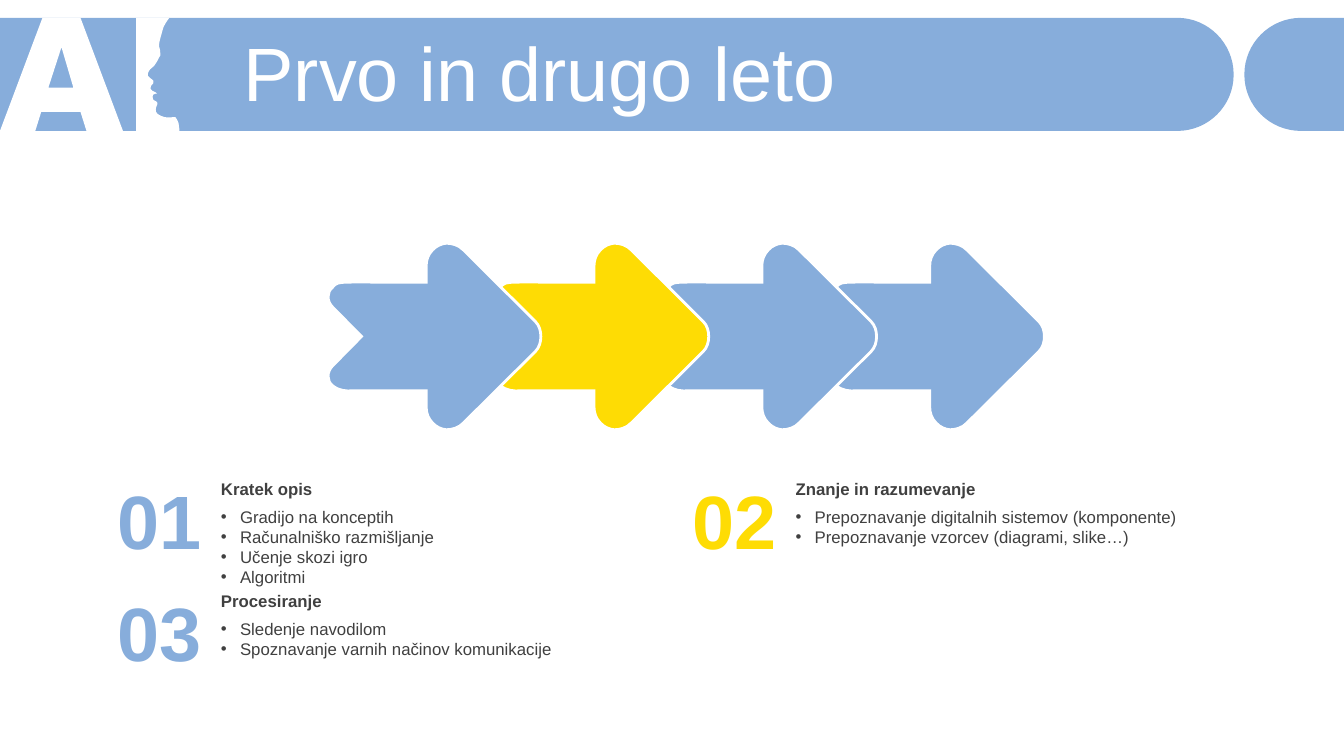
from dataclasses import dataclass
from math import cos, radians, sin

from lxml import etree
from pptx import Presentation
from pptx.dml.color import RGBColor
from pptx.enum.text import MSO_ANCHOR, MSO_AUTO_SIZE, PP_ALIGN
from pptx.oxml.ns import qn
from pptx.util import Cm, Pt

TOP, MIDDLE = MSO_ANCHOR.TOP, MSO_ANCHOR.MIDDLE
LEFT, RIGHT = PP_ALIGN.LEFT, PP_ALIGN.RIGHT
GROW, FIXED = MSO_AUTO_SIZE.SHAPE_TO_FIT_TEXT, MSO_AUTO_SIZE.NONE

Point = tuple[float, float]
Move = tuple[str, list[Point]]


@dataclass(frozen=True)
class Theme:
    font: str = "Arial"
    blue: str = "87ADDB"
    gold: str = "FEDC04"
    white: str = "FFFFFF"
    ink: str = "404040"
    large: int = 54
    small: int = 12
    edge: int = 2


@dataclass(frozen=True)
class Card:
    num: str
    left: float
    top: float
    head: str
    items: list[str]
    color: str


THEME = Theme()

# Outlines in cm: M starts a contour, L is a line, C a curve
BAR = "M 0 .45 L 29.67 .45 C 30.45 .45 31.09 1.09 31.09 1.88 C 31.09 2.67 30.45 3.3 29.67 3.3 L 0 3.3"
CAP = ("M 32.79 .45 L 33.87 .45 L 33.87 3.3 L 32.79 3.3 C 32 3.3 31.36 2.67 31.36 1.88 "
       "C 31.36 1.09 32 .45 32.79 .45")
LETTER = ("M 1.07 .45 L 2.03 .45 L 3.1 3.3 L 2.18 3.3 L 2.03 2.82 L 1.04 2.82 L .89 3.3 L 0 3.3 "
          "M 1.55 1.19 L 1.22 2.21 L 1.85 2.21 ")
FACE = ("M 3.43 .45 L 4.27 .45 C 4.22 .51 4.11 .66 4.09 .79 L 4.04 .97 "
        "C 4.01 1.07 4.01 1.14 4.01 1.17 C 4.04 1.22 4.04 1.3 4.04 1.4 L 4.01 1.45 "
        "C 3.99 1.5 3.89 1.68 3.84 1.7 C 3.76 1.75 3.71 1.85 3.73 1.91 "
        "C 3.76 1.96 3.81 1.98 3.84 2.01 C 3.86 2.01 3.89 2.06 3.86 2.11 "
        "C 3.86 2.13 3.81 2.13 3.81 2.16 C 3.78 2.21 3.78 2.26 3.84 2.29 "
        "C 3.89 2.31 3.96 2.34 3.96 2.36 C 3.96 2.36 3.86 2.36 3.86 2.39 "
        "C 3.84 2.41 3.84 2.46 3.86 2.51 C 3.86 2.54 3.94 2.54 3.96 2.57 "
        "C 3.99 2.62 3.96 2.62 3.94 2.69 C 3.91 2.77 3.91 2.87 4.06 2.92 "
        "C 4.17 2.97 4.27 2.97 4.37 2.95 L 4.42 2.95 C 4.47 3 4.47 3.05 4.5 3.1 "
        "C 4.5 3.15 4.52 3.2 4.52 3.25 L 4.52 3.3 L 3.43 3.3")
# An arrow around its centre
ARROW = ("M -1.38 0 L -2.11 -.74 C -2.26 -.89 -2.26 -1.12 -2.11 -1.24 "
         "C -2.03 -1.34 -2.01 -1.37 -1.6 -1.37 L .25 -1.37 L .25 -1.78 "
         "C .25 -1.93 .3 -2.07 .41 -2.18 C .51 -2.29 .64 -2.34 .76 -2.35 "
         "C .89 -2.35 1.07 -2.31 1.19 -2.18 L 3 -.38 C 3.1 -.28 3.14 -.14 3.14 0 "
         "C 3.14 .14 3.1 .28 3 .38 L 1.19 2.18 C 1.07 2.31 .89 2.35 .76 2.35 "
         "C .64 2.34 .51 2.29 .41 2.18 C .3 2.07 .25 1.93 .25 1.78 L .25 1.37 L -1.6 1.37 "
         "C -1.78 1.38 -1.95 1.37 -2.11 1.24 C -2.26 1.12 -2.26 .89 -2.11 .74")

# Arrow row
FIRST, STEP, AXIS, TILT = 10.49, 4.23, 8.48, 45
ARROWS = [THEME.blue, THEME.gold, THEME.blue, THEME.blue]

CARDS = [
    Card("01", 5.57, 11.94, "Kratek opis",
         ["Gradijo na konceptih", "Računalniško razmišljanje", "Učenje skozi igro", "Algoritmi"],
         THEME.blue),
    Card("03", 5.57, 14.76, "Procesiranje",
         ["Sledenje navodilom", "Spoznavanje varnih načinov komunikacije"], THEME.blue),
    Card("02", 20.05, 11.94, "Znanje in razumevanje",
         ["Prepoznavanje digitalnih sistemov (komponente)",
          "Prepoznavanje vzorcev (diagrami, slike…)"], THEME.gold),
]


def trace(path: str) -> list[Move]:
    """Split an outline into marks with their points."""
    words = iter(path.split())
    return [(mark, [(float(next(words)), float(next(words)))
                    for _ in range(3 if mark == "C" else 1)]) for mark in words]


def draw(shapes, moves: list[Move], fill: str, edge: str = "", turn: float = 0) -> None:
    """Draw closed contours as one shape."""
    pen = None
    for i, (mark, ends) in enumerate(moves):
        dots = [(Cm(x), Cm(y)) for x, y in ends]
        last = i + 1 == len(moves) or moves[i + 1][0] == "M"
        if pen is None:
            pen = shapes.build_freeform(*dots[0])
        elif mark == "M":
            pen.move_to(*dots[0])
        else:
            pen.add_line_segments(dots, close=last)
    shape = pen.convert_to_shape()
    # Join the three points of each curve
    legs = shape._element.iter(qn("a:lnTo"))
    legs = iter(list(legs))
    for mark, _ in moves:
        if mark == "L":
            next(legs)
        elif mark == "C":
            trio = [next(legs) for _ in range(3)]
            curve = etree.Element(qn("a:cubicBezTo"))
            trio[0].addprevious(curve)
            for leg in trio:
                curve.append(leg[0])
                leg.getparent().remove(leg)
    shape.shadow.inherit = False
    shape.rotation = turn
    shape.fill.solid()
    shape.fill.fore_color.rgb = RGBColor.from_string(fill)
    if edge:
        shape.line.color.rgb = RGBColor.from_string(edge)
        shape.line.width = Pt(THEME.edge)
        etree.SubElement(shape._element.spPr.find(qn("a:ln")), qn("a:miter"), lim="800000")
    else:
        shape.line.fill.background()


def arrow(shapes, mid: float, fill: str) -> None:
    """Draw an arrow in its own frame, then tilt the frame."""
    c, s = cos(radians(TILT)), sin(radians(TILT))
    moves = [(mark, [(mid + c * x + s * y, AXIS + c * y - s * x) for x, y in ends])
             for mark, ends in trace(ARROW)]
    draw(shapes, moves, fill, THEME.white, TILT)


def write(shapes, text: str | list[str], box: tuple[float, float, float, float], *,
          size: int = THEME.small, color: str = THEME.ink, bold: bool = False,
          align=LEFT, anchor=MIDDLE, fit=GROW, bullet: bool = False,
          inset: tuple[float, float, float] = (0, .13, .25),
          lines: float | None = None, before: float = 0) -> None:
    """Add a text box; inset is left, top and bottom, right."""
    frame = shapes.add_textbox(*map(Cm, box)).text_frame
    frame.word_wrap = True
    frame.auto_size = fit
    frame.vertical_anchor = anchor
    frame.margin_left, frame.margin_top, frame.margin_right = map(Cm, inset)
    frame.margin_bottom = Cm(inset[1])
    for i, part in enumerate([text] if isinstance(text, str) else text):
        para = frame.add_paragraph() if i else frame.paragraphs[0]
        para.alignment = align
        para.line_spacing = lines
        para.space_before = Pt(before)
        run = para.add_run()
        run.text = part
        run.font.name = THEME.font
        run.font.size = Pt(size)
        run.font.bold = bold
        run.font.color.rgb = RGBColor.from_string(color)
        if bullet:
            props = para._p.get_or_add_pPr()
            props.set("marL", str(Cm(.48)))
            props.set("indent", str(-Cm(.48)))
            etree.SubElement(props, qn("a:buFont"), typeface=THEME.font)
            etree.SubElement(props, qn("a:buChar"), char="•")


def card(shapes, item: Card) -> None:
    """Add a heading with its list, and the number beside them."""
    group = shapes.add_group_shape().shapes
    write(group, item.head, (item.left, item.top, 11.3, .76), bold=True)
    write(group, item.items, (item.left, item.top + .69, 11.3, .25 + .51 * len(item.items)),
          anchor=TOP, bullet=True)
    write(shapes, item.num, (item.left - 2.88, item.top, 2.39, 2.31), size=THEME.large,
          color=item.color, bold=True, align=RIGHT, inset=(0, 0, 0))


def main() -> None:
    deck = Presentation()
    deck.slide_width, deck.slide_height = Cm(33.87), Cm(19.05)
    shapes = deck.slides.add_slide(deck.slide_layouts[6]).shapes

    # Header band
    for path, fill in ((BAR, THEME.blue), (LETTER + FACE, THEME.white), (CAP, THEME.blue)):
        draw(shapes, trace(path), fill)

    # Arrows, the rightmost at the back
    for i, fill in reversed(list(enumerate(ARROWS))):
        arrow(shapes, FIRST + i * STEP, fill)

    # Title and cards
    write(shapes, "Prvo in drugo leto", (5.89, .94, 27.15, 2.01), size=THEME.large,
          color=THEME.white, fit=FIXED, inset=(.25, .13, .25), lines=.9, before=10)
    for item in CARDS:
        card(shapes, item)

    deck.save("out.pptx")


if __name__ == "__main__":
    main()
